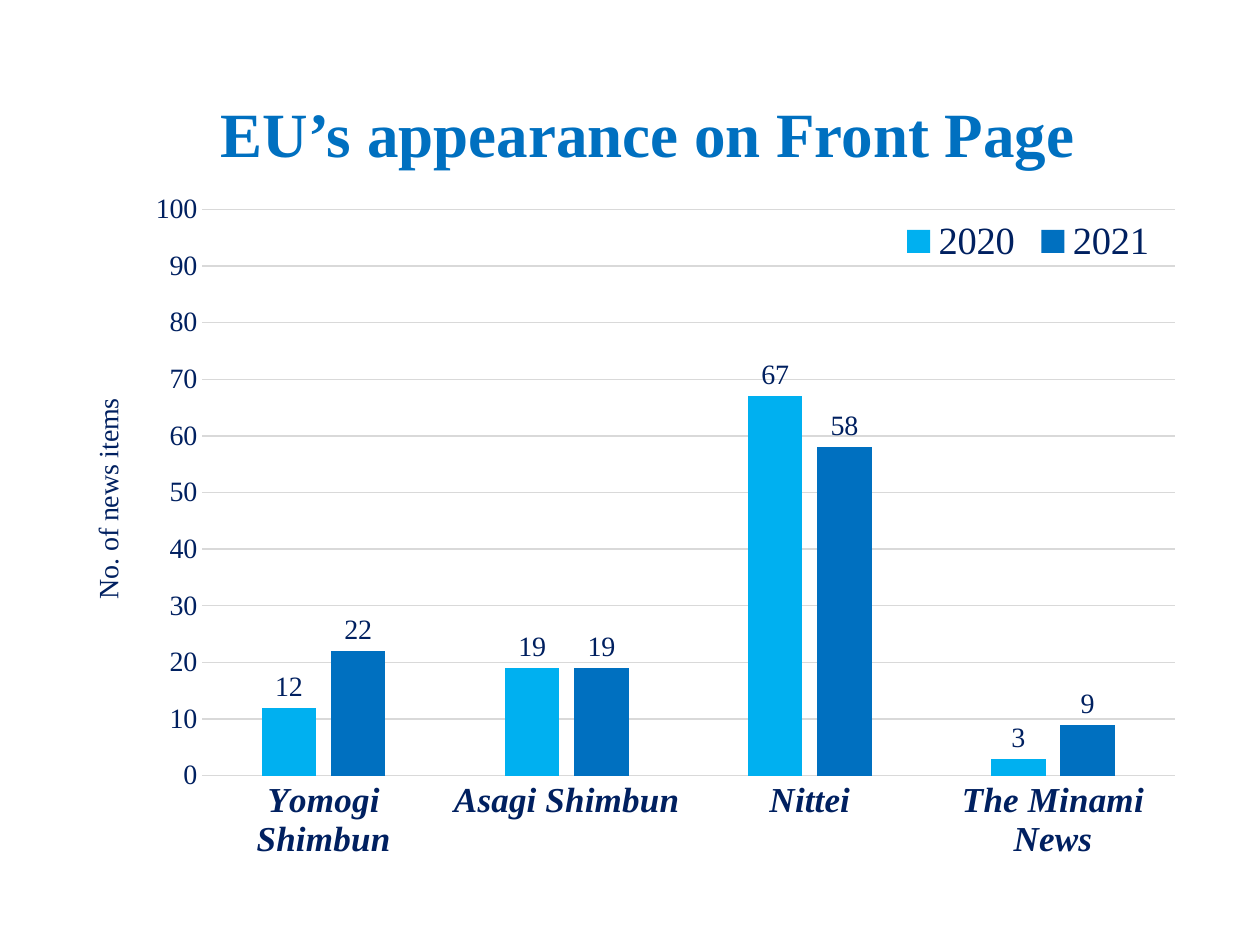
from lxml import etree
from pptx import Presentation
from pptx.chart.data import CategoryChartData
from pptx.dml.color import RGBColor
from pptx.enum.chart import (XL_CHART_TYPE, XL_LABEL_POSITION,
                             XL_LEGEND_POSITION, XL_TICK_MARK)
from pptx.enum.text import MSO_ANCHOR, PP_ALIGN
from pptx.oxml.ns import qn
from pptx.util import Cm, Pt

FONT = "Times New Roman"
BLUE = RGBColor(0x00, 0x70, 0xC0)
SKY = RGBColor(0x00, 0xB0, 0xF0)
NAVY = RGBColor(0x00, 0x20, 0x60)
GREY = RGBColor(0xD9, 0xD9, 0xD9)

CLUSTERED = XL_CHART_TYPE.COLUMN_CLUSTERED
OUTSIDE_END = XL_LABEL_POSITION.OUTSIDE_END
LEGEND_TOP = XL_LEGEND_POSITION.TOP
NO_TICK = XL_TICK_MARK.NONE
MIDDLE = MSO_ANCHOR.MIDDLE
CENTER = PP_ALIGN.CENTER

NEWSPAPERS = ["Yomogi Shimbun", "Asagi Shimbun", "Nittei", "The Minami News"]
SERIES = [("2020", [12, 19, 67, 3], SKY), ("2021", [22, 19, 58, 9], BLUE)]


def style_font(font, size, color=NAVY, bold=False, italic=False):
    font.name = FONT
    font.size = Pt(size)
    font.color.rgb = color
    font.bold = bold
    font.italic = italic


def write_text(frame, text, **style):
    """Put one centred paragraph in a text frame."""
    para = frame.paragraphs[0]
    para.alignment = CENTER
    span = para.add_run()
    span.text = text
    style_font(span.font, **style)
    return para


def add_title(page, text):
    box = page.shapes.add_textbox(Cm(2.11), Cm(1.75), Cm(21.9), Cm(2.01))
    frame = box.text_frame
    frame.word_wrap = True
    frame.vertical_anchor = MIDDLE
    para = write_text(frame, text, size=36, color=BLUE, bold=True)
    para.line_spacing = 0.9


def set_layout(element, index, **settings):
    """Place a chart part by fractions of the chart area."""
    for old in element.findall(qn("c:layout")):
        element.remove(old)
    layout = etree.Element(qn("c:layout"))
    manual = etree.SubElement(layout, qn("c:manualLayout"))
    for name, value in settings.items():
        etree.SubElement(manual, qn(f"c:{name}")).set("val", str(value))
    element.insert(index, layout)


def style_line(line, color=GREY):
    line.color.rgb = color
    line.width = Pt(0.75)


def style_axes(chart):
    categories, values = chart.category_axis, chart.value_axis
    for axis in (categories, values):
        axis.major_tick_mark = axis.minor_tick_mark = NO_TICK
    style_font(categories.tick_labels.font, 20, bold=True, italic=True)
    style_line(categories.format.line)

    values.minimum_scale, values.maximum_scale = 0, 100
    values.major_unit = 10
    style_font(values.tick_labels.font, 16)
    values.format.line.fill.background()
    style_line(values.major_gridlines.format.line)

    # Upright title beside the value axis
    title = values.axis_title
    write_text(title.text_frame, "No. of news items", size=16)
    element = title._element
    element.find(".//" + qn("a:bodyPr")).set("rot", "-5400000")
    set_layout(element, 1, xMode="edge", yMode="edge", x=0.02, y=0.31)


def style_series(chart):
    plot = chart.plots[0]
    plot.gap_width, plot.overlap = 219, -27
    plot.vary_by_categories = False
    for series, (_, _, color) in zip(plot.series, SERIES):
        series.format.fill.solid()
        series.format.fill.fore_color.rgb = color
        labels = series.data_labels
        labels.show_value = True
        labels.position = OUTSIDE_END
        style_font(labels.font, 16)


def add_legend(chart):
    chart.has_legend = True
    legend = chart.legend
    legend.position = LEGEND_TOP
    legend.include_in_layout = False
    style_font(legend.font, 22)
    set_layout(legend._element, 1, xMode="edge", yMode="edge",
               x=0.71, y=0.06, w=0.23, h=0.07)


def add_news_chart(page):
    data = CategoryChartData()
    data.categories = NEWSPAPERS
    for name, counts, _ in SERIES:
        data.add_series(name, counts)
    chart = page.shapes.add_chart(CLUSTERED, Cm(1.24), Cm(3.51), Cm(23.62),
                                  Cm(14.27), data).chart
    chart.has_title = False
    style_font(chart.font, 16)
    style_axes(chart)
    style_series(chart)
    add_legend(chart)
    plot_area = chart._chartSpace.find(".//" + qn("c:plotArea"))
    set_layout(plot_area, 0, layoutTarget="inner", xMode="edge", yMode="edge",
               x=0.12, y=0.05, w=0.83, h=0.8)


def main():
    deck = Presentation()
    deck.slide_width, deck.slide_height = Cm(25.4), Cm(19.05)
    page = deck.slides.add_slide(deck.slide_layouts[6])
    add_title(page, "EU’s appearance on Front Page")
    add_news_chart(page)
    deck.save("out.pptx")


if __name__ == "__main__":
    main()
